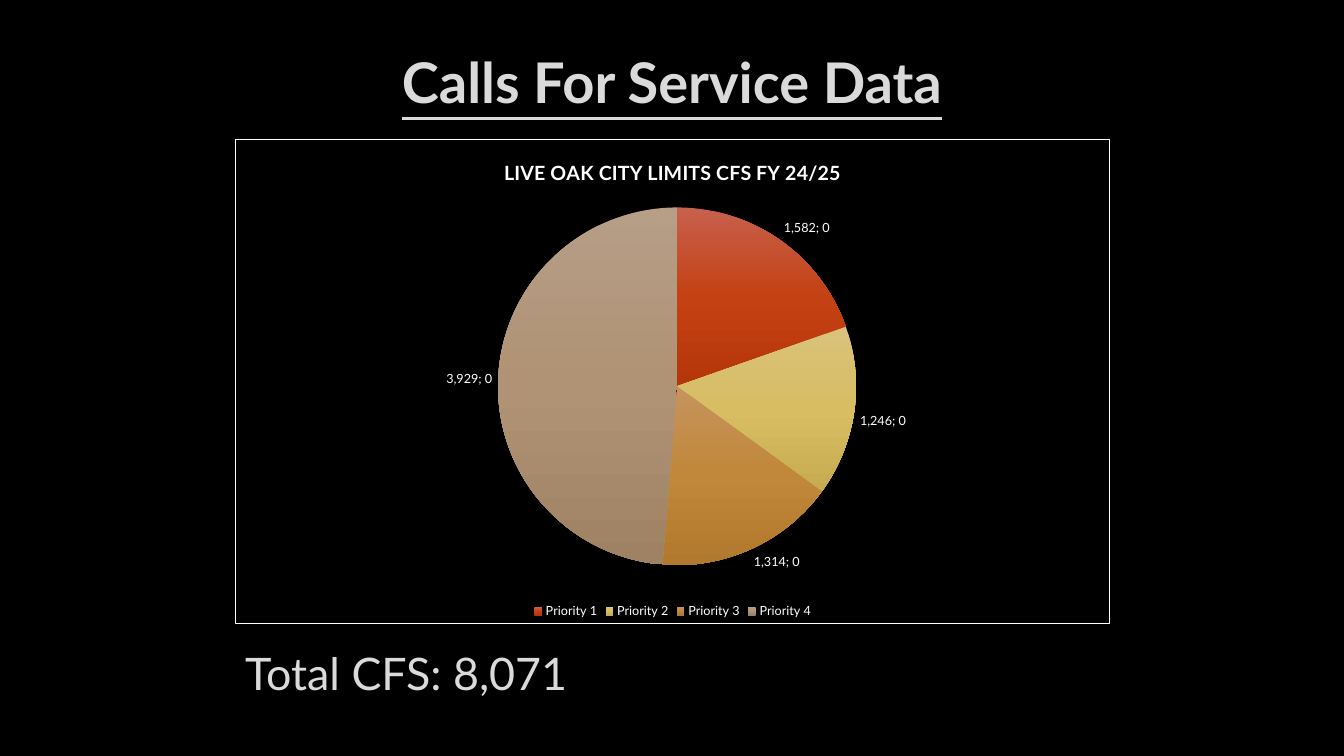
from lxml.etree import fromstring
from pptx import Presentation
from pptx.chart.data import CategoryChartData
from pptx.dml.color import RGBColor
from pptx.enum.chart import XL_CHART_TYPE, XL_LABEL_POSITION, XL_LEGEND_POSITION
from pptx.enum.text import MSO_ANCHOR, PP_ALIGN
from pptx.oxml.ns import qn
from pptx.util import Pt

COLORS = {"background": "000000", "heading": "DADADA", "chart": "FFFFFF"}
FONT = "Lato"
NAMESPACES = (
    'xmlns:a="http://schemas.openxmlformats.org/drawingml/2006/main" '
    'xmlns:c="http://schemas.openxmlformats.org/drawingml/2006/chart"'
)
# Priority: number of calls, gradient from top to bottom
PRIORITIES = {
    "Priority 1": (1582, ("C7604D", "C44113", "B5360A")),
    "Priority 2": (1246, ("D9C27B", "D8BD63", "C7AB51")),
    "Priority 3": (1314, ("C5945D", "C1873A", "B1792E")),
    "Priority 4": (3929, ("B69E87", "B09274", "9F8264")),
}
PIE_AREA = {"x": 0.3, "y": 0.14, "w": 0.41, "h": 0.74}


def xml(tag, content="", attributes=""):
    return fromstring(f"<{tag} {NAMESPACES} {attributes}>{content}</{tag}>")


class CallsSlide:
    def __init__(self, presentation):
        self.slide = presentation.slides.add_slide(presentation.slide_layouts[5])
        background = self.slide.background.fill
        background.solid()
        background.fore_color.rgb = RGBColor.from_string(COLORS["background"])

    def style(self, font, size, color, bold=False):
        font.name = FONT
        font.size = Pt(size)
        font.bold = bold
        font.color.rgb = RGBColor.from_string(COLORS[color])

    def fill_frame(self, frame, text, size, align, anchor, bold=False):
        frame.word_wrap = True
        frame.vertical_anchor = anchor
        paragraph = frame.paragraphs[0]
        paragraph.alignment = align
        run = paragraph.add_run()
        run.text = text
        self.style(run.font, size, "heading", bold)
        return run

    def title(self, text, left, top, width, height):
        heading = self.slide.shapes.title
        heading.left, heading.top = Pt(left), Pt(top)
        heading.width, heading.height = Pt(width), Pt(height)
        run = self.fill_frame(
            heading.text_frame, text, 40, PP_ALIGN.CENTER, MSO_ANCHOR.MIDDLE, True
        )
        run.font.underline = True

    def text(self, text, left, top, width, height):
        box = self.slide.shapes.add_textbox(Pt(left), Pt(top), Pt(width), Pt(height))
        self.fill_frame(box.text_frame, text, 32, PP_ALIGN.LEFT, MSO_ANCHOR.TOP)

    def pie(self, title, left, top, width, height):
        data = CategoryChartData(number_format="#,##0")
        data.categories = list(PRIORITIES)
        data.add_series("Series 1", [calls for calls, _ in PRIORITIES.values()])
        chart = self.slide.shapes.add_chart(
            XL_CHART_TYPE.PIE, Pt(left), Pt(top), Pt(width), Pt(height), data
        ).chart
        self.style(chart.font, 10, "chart")

        chart.has_title = True
        run = chart.chart_title.text_frame.paragraphs[0].add_run()
        run.text = title
        self.style(run.font, 14, "chart", True)

        chart.has_legend = True
        chart.legend.position = XL_LEGEND_POSITION.BOTTOM
        chart.legend.include_in_layout = False
        self.style(chart.legend.font, 9, "chart")

        plot = chart.plots[0]
        plot.vary_by_categories = True
        for index, (_, gradient) in enumerate(PRIORITIES.values()):
            point = plot.series[0].points[index]
            point.format.line.fill.background()
            self.shade(point.format.fill, gradient)
        self.label(plot)
        self.border(chart)

    def label(self, plot):
        plot.has_data_labels = True
        labels = plot.data_labels
        labels.show_value = labels.show_percentage = True
        labels.position = XL_LABEL_POSITION.OUTSIDE_END
        labels.number_format = "#,##0"
        labels.number_format_is_linked = False
        self.style(labels.font, 9, "chart")
        flags = [qn("c:showBubbleSize"), qn("c:showPercent")]
        last_flag = [child for child in labels._element if child.tag in flags][-1]
        last_flag.addnext(xml("c:separator", "; "))

    def shade(self, fill, gradient):
        """Fill a slice with evenly spaced colours running downwards."""
        fill.gradient()
        stops = "".join(
            f'<a:gs pos="{step * 50000}"><a:srgbClr val="{color}"/></a:gs>'
            for step, color in enumerate(gradient)
        )
        content = f'<a:gsLst>{stops}</a:gsLst><a:lin ang="5400000" scaled="0"/>'
        properties = fill._xPr
        properties.replace(properties.find(qn("a:gradFill")), xml("a:gradFill", content))

    def border(self, chart):
        """Give the chart a square white border and fix the place of the pie."""
        space = chart.element
        body = space.find(qn("c:chart"))
        for old in space.findall(qn("c:roundedCorners")):
            space.remove(old)
        body.addprevious(xml("c:roundedCorners", attributes='val="0"'))
        line = f'<a:solidFill><a:srgbClr val="{COLORS["chart"]}"/></a:solidFill>'
        body.addnext(xml("c:spPr", f'<a:noFill/><a:ln w="{Pt(0.75)}">{line}</a:ln>'))

        area = body.find(qn("c:plotArea"))
        for old in area.findall(qn("c:layout")):
            area.remove(old)
        modes = '<c:layoutTarget val="inner"/><c:xMode val="edge"/><c:yMode val="edge"/>'
        place = "".join(f'<c:{side} val="{part}"/>' for side, part in PIE_AREA.items())
        area.insert(0, xml("c:layout", f"<c:manualLayout>{modes}{place}</c:manualLayout>"))


def main():
    presentation = Presentation()
    presentation.slide_width, presentation.slide_height = Pt(960), Pt(540)
    calls = CallsSlide(presentation)
    calls.title("Calls For Service Data", 72.5, 20, 815, 76.5)
    calls.text("Total CFS: 8,071", 168, 458, 408, 76)
    calls.pie("LIVE OAK CITY LIMITS CFS FY 24/25", 168, 99.5, 625, 346)
    presentation.save("out.pptx")


if __name__ == "__main__":
    main()
